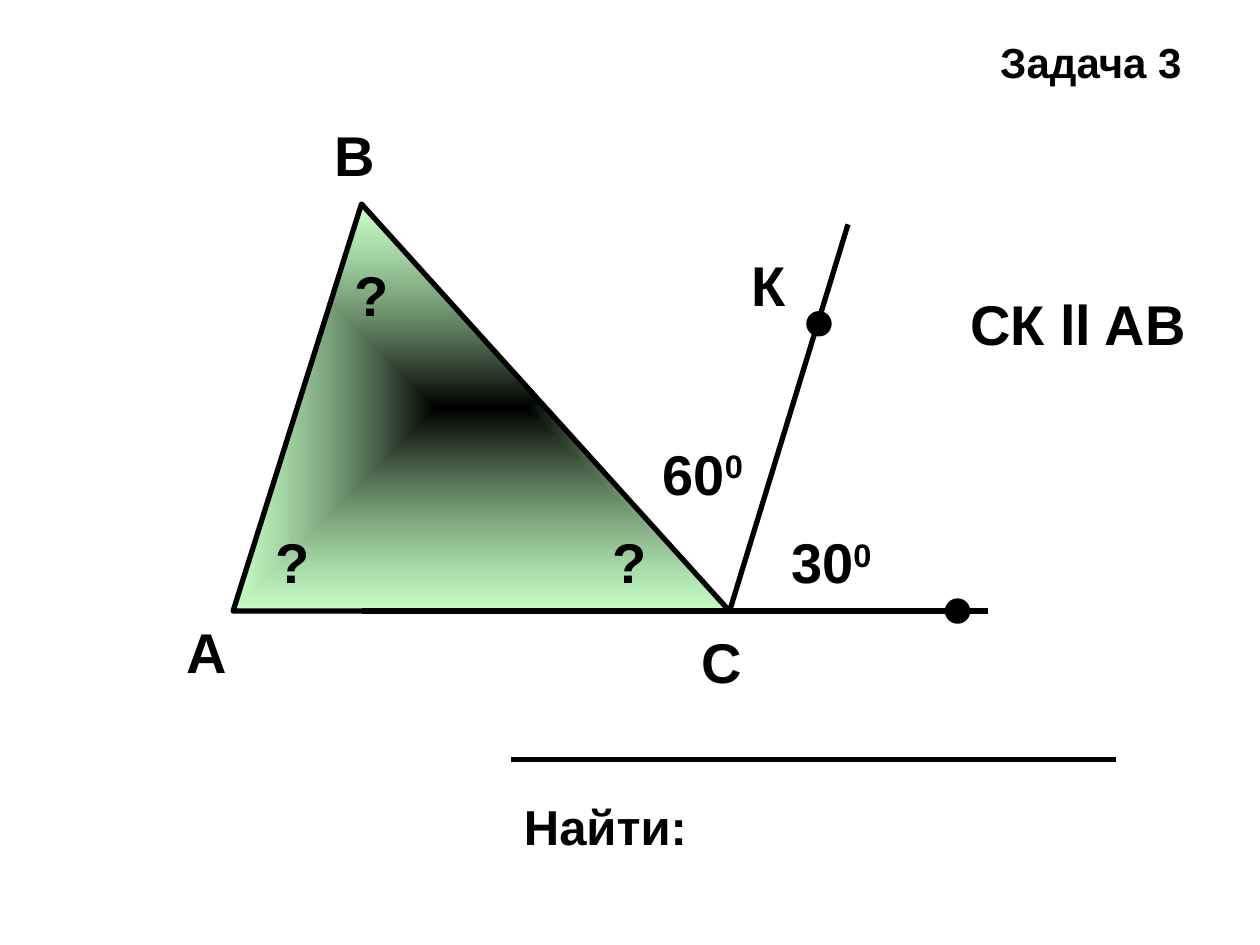
from lxml import etree
from pptx import Presentation
from pptx.dml.color import RGBColor
from pptx.enum.shapes import MSO_CONNECTOR, MSO_SHAPE
from pptx.enum.text import MSO_AUTO_SIZE as AutoSize
from pptx.oxml import parse_xml
from pptx.oxml.ns import nsdecls, qn
from pptx.util import Pt

BLACK = RGBColor(0, 0, 0)
GREEN = RGBColor(0x9F, 0xFF, 0x9F)
STROKE = Pt(3)


def add_label(slide, text, x, y, width, height=45.5, size=32, power="", wrap=False):
    """Bold text, with an optional superscript after it."""
    label = slide.shapes.add_textbox(Pt(x), Pt(y), Pt(width), Pt(height))
    frame = label.text_frame
    frame.word_wrap = wrap
    frame.auto_size = AutoSize.SHAPE_TO_FIT_TEXT
    for part, baseline in ((text, None), (power, "30000")):
        if not part:
            continue
        run = frame.paragraphs[0].add_run()
        run.text = part
        run.font.name = "Arial"
        run.font.size = Pt(size)
        run.font.bold = True
        run.font.color.rgb = BLACK
        if baseline:
            run.font._element.set("baseline", baseline)


def add_segment(slide, start, end):
    segment = slide.shapes.add_connector(
        MSO_CONNECTOR.STRAIGHT, *(Pt(value) for value in (*start, *end)))
    segment.line.color.rgb = BLACK
    segment.line.width = STROKE
    etree.SubElement(segment._element.spPr, qn("a:effectLst"))


def add_dot(slide, center, diameter=11.5):
    x, y = (Pt(value - diameter / 2) for value in center)
    dot = slide.shapes.add_shape(MSO_SHAPE.OVAL, x, y, Pt(diameter), Pt(diameter))
    dot.shadow.inherit = False
    dot.fill.solid()
    dot.fill.fore_color.rgb = BLACK
    dot.line.color.rgb = BLACK
    dot.line.width = STROKE


def add_triangle(slide, *corners):
    first, *others = [(Pt(x), Pt(y)) for x, y in corners]
    outline = slide.shapes.build_freeform(*first)
    outline.add_line_segments(others, close=True)
    triangle = outline.convert_to_shape()
    triangle.shadow.inherit = False
    triangle.line.color.rgb = BLACK
    triangle.line.width = STROKE

    # Dark centre fading to translucent green along a rectangular path
    triangle.fill.gradient()
    for stop, position, color in zip(triangle.fill.gradient_stops, (0, 1), (BLACK, GREEN)):
        stop.position = position
        stop.color.rgb = color
    gradient = triangle._element.spPr.find(qn("a:gradFill"))
    green = gradient.findall(".//" + qn("a:srgbClr"))[-1]
    etree.SubElement(green, qn("a:alpha"), val="56000")
    gradient.replace(gradient.find(qn("a:lin")), parse_xml(
        f'<a:path {nsdecls("a")} path="rect">'
        '<a:fillToRect l="50000" t="50000" r="50000" b="50000"/></a:path>'))


def add_figure(slide, left, top):
    def at(x, y):
        return left + x, top + y

    a, b, c = at(37.2, 289.2), at(110.6, 56.6), at(320.9, 289.2)

    # Triangle, extended base and the ray CK
    add_triangle(slide, a, c, b)
    add_segment(slide, (b[0], a[1]), at(468.5, 289.2))
    add_segment(slide, c, at(388.6, 68.2))
    for center in (at(451.2, 289.2), at(372, 125)):
        add_dot(slide, center)

    # Point names
    for name, x, y, width in (("А", 3.4, 289.2, 37.4), ("B", 88.3, 5.5, 34.6),
                              ("C", 297.8, 295, 36.7), ("К", 326.6, 79.7, 34.6)):
        add_label(slide, name, *at(x, y), width)

    # Known and unknown angles
    for degrees, x, y in (("60", 275.5, 187.7), ("30", 349, 238.1)):
        add_label(slide, degrees, *at(x, y), 62.6, power="0")
    for x, y in ((99.8, 85.4), (54.5, 238.1), (246.7, 238.1)):
        add_label(slide, "?", *at(x, y), 33.8, wrap=True)


def add_conditions(slide, left, top):
    add_label(slide, "Задача 3", left + 17.3, top, 119.5, 36, size=24)
    add_label(slide, "СК ll AB", left, top + 144.7, 147.6)


def add_question(slide, left, top, width):
    add_segment(slide, (left, top), (left + width, top))
    add_label(slide, "Найти:", left, top + 17.3, 107.3, 41, size=28)


def main():
    deck = Presentation()
    deck.slide_width, deck.slide_height = Pt(720), Pt(540)
    slide = deck.slides.add_slide(deck.slide_layouts[6])
    add_figure(slide, 96, 60)
    add_conditions(slide, 547.2, 17.3)
    add_question(slide, 292.3, 434.2, 345.6)
    deck.save("out.pptx")


if __name__ == "__main__":
    main()
